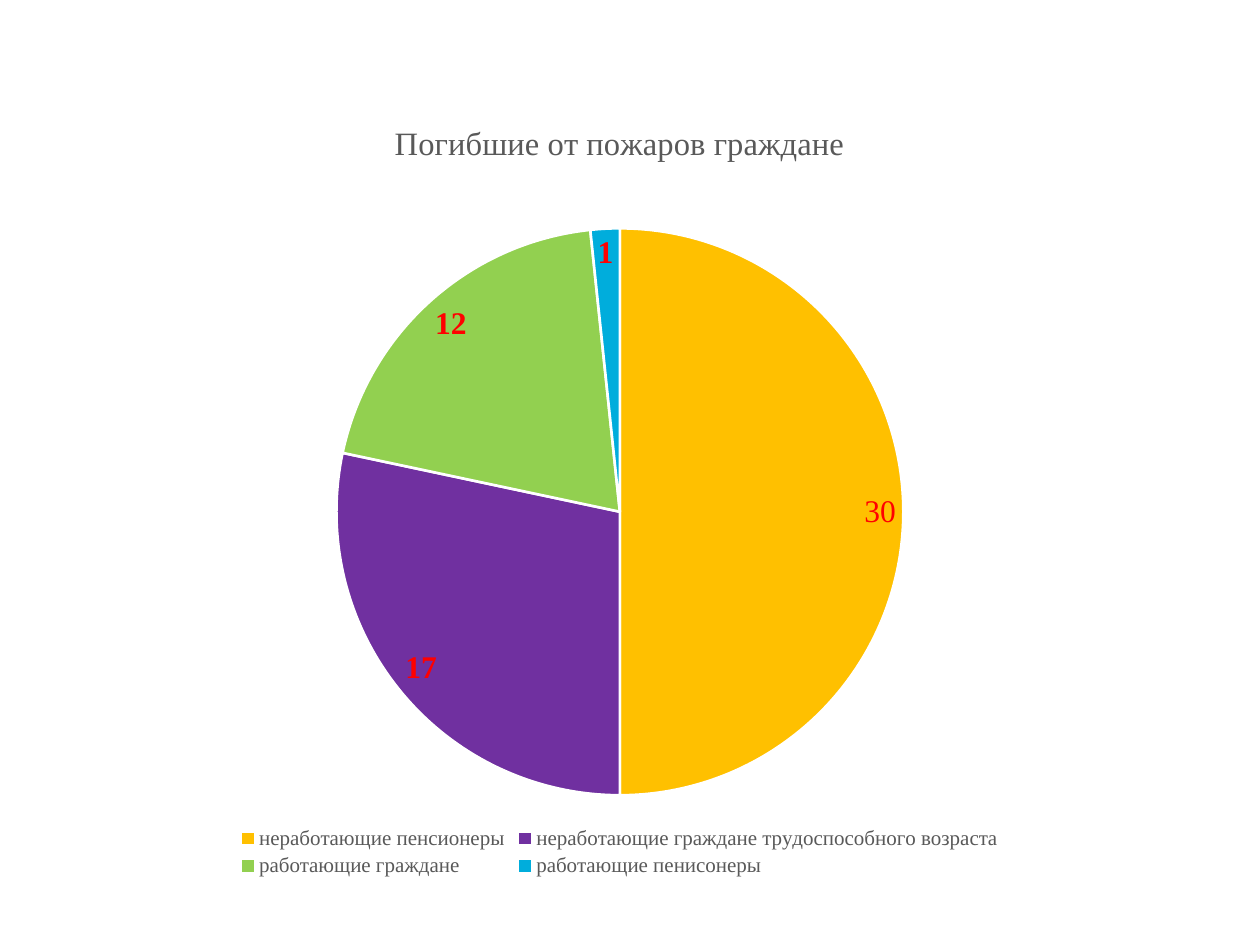
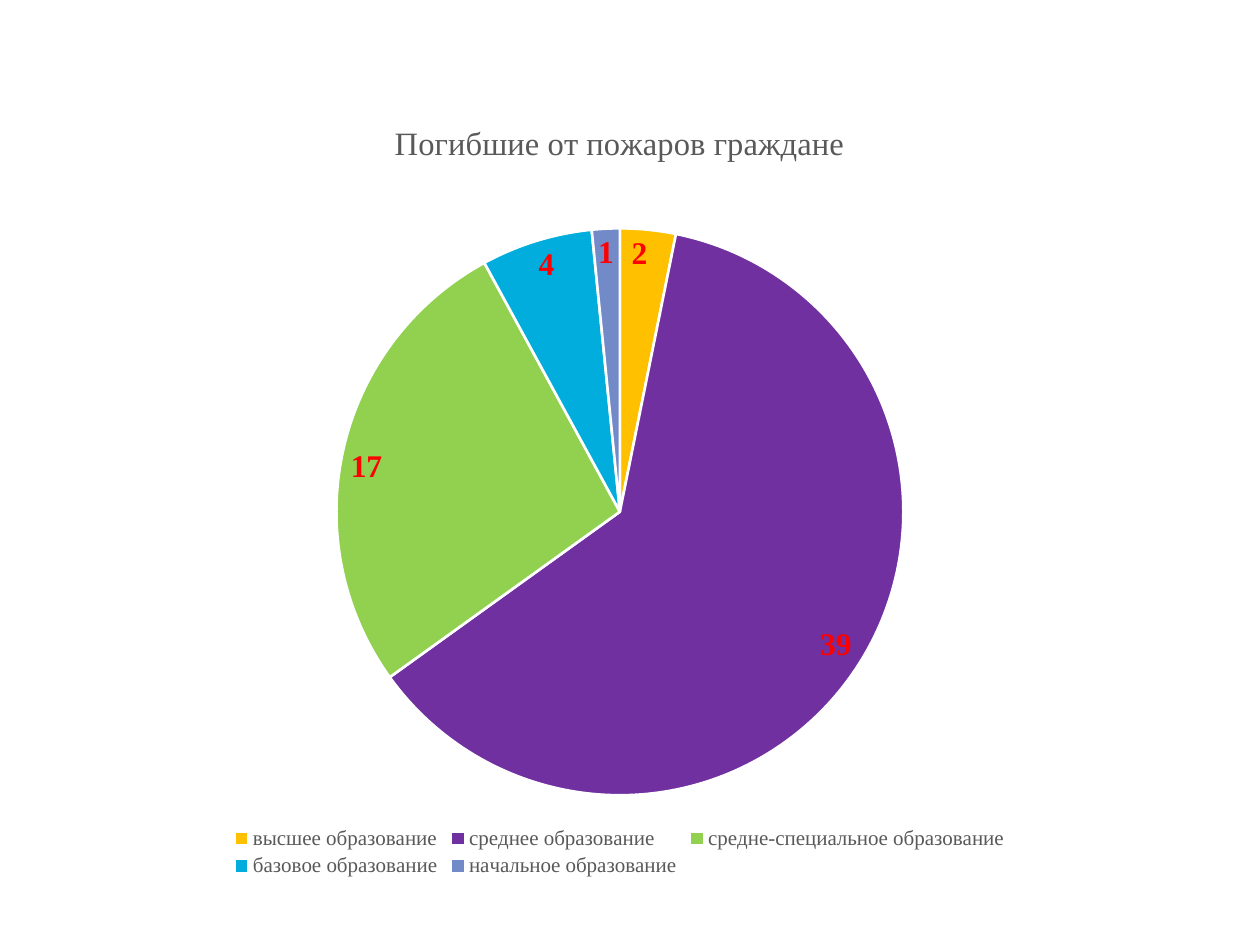
"""Builds two slides with pie charts on people who died in fires."""
import lxml.etree
import pptx
import pptx.chart.data
import pptx.dml.color
import pptx.enum.chart
import pptx.oxml.ns
import pptx.util

Inches = pptx.util.Inches
FONT = "Times New Roman"
TITLE = "Погибшие от пожаров граждане"
COLORS = {"text": "595959", "label": "FF0000", "border": "FFFFFF"}
SLICES = {"amber": "FFC000", "purple": "7030A0", "green": "92D050",
          "cyan": "00ADDC", "blue": "738AC8"}
PLOT_LAYOUT = {"x": 0.24, "y": 0.17, "w": 0.52, "h": 0.72}

OCCUPATION = {
    "неработающие пенсионеры": 30,
    "неработающие граждане трудоспособного возраста": 17,
    "работающие граждане": 12,
    "работающие пенисонеры": 1,
}
EDUCATION = {
    "высшее образование": 2,
    "среднее образование": 39,
    "средне-специальное образование": 17,
    "базовое образование": 4,
    "начальное образование": 1,
}


def rgb(value):
    return pptx.dml.color.RGBColor.from_string(value)


def set_font(font, size, color, bold=False):
    font.name = FONT
    font.size = pptx.util.Pt(size)
    font.bold = bold
    font.color.rgb = rgb(color)


def place_plot(chart):
    qn = pptx.oxml.ns.qn
    plot_area = chart._chartSpace.chart.plotArea
    for old in plot_area.findall(qn("c:layout")):
        plot_area.remove(old)
    layout = lxml.etree.Element(qn("c:layout"))
    manual = lxml.etree.SubElement(layout, qn("c:manualLayout"))
    settings = {"layoutTarget": "inner", "xMode": "edge", "yMode": "edge",
                **PLOT_LAYOUT}
    for name, value in settings.items():
        lxml.etree.SubElement(manual, qn(f"c:{name}"), val=str(value))
    plot_area.insert(0, layout)


def format_slices(series):
    for i, color in zip(range(len(series.values)), SLICES.values()):
        fmt = series.points[i].format
        fmt.fill.solid()
        fmt.fill.fore_color.rgb = rgb(color)
        fmt.line.color.rgb = rgb(COLORS["border"])
        fmt.line.width = pptx.util.Pt(1.5)


def format_labels(labels):
    labels.show_value = True
    labels.show_percentage = False
    labels.position = pptx.enum.chart.XL_LABEL_POSITION.INSIDE_END
    set_font(labels.font, 18, COLORS["label"], True)


def add_pie(slide, values):
    data = pptx.chart.data.CategoryChartData()
    data.categories = list(values)
    data.add_series(TITLE, list(values.values()))
    chart = slide.shapes.add_chart(
        pptx.enum.chart.XL_CHART_TYPE.PIE, Inches(0.5), Inches(0.75),
        Inches(8.84), Inches(6.25), data).chart
    set_font(chart.font, 10, "000000")

    chart.has_title = True
    p = chart.chart_title.text_frame.paragraphs[0]
    p.text = TITLE
    set_font(p.font, 18.6, COLORS["text"])

    chart.has_legend = True
    chart.legend.position = pptx.enum.chart.XL_LEGEND_POSITION.BOTTOM
    chart.legend.include_in_layout = False
    set_font(chart.legend.font, 12, COLORS["text"])

    plot = chart.plots[0]
    plot.vary_by_categories = True
    series = plot.series[0]
    format_slices(series)
    format_labels(series.data_labels)
    place_plot(chart)
    return series


def main():
    prs = pptx.Presentation()
    prs.slide_width, prs.slide_height = Inches(10), Inches(7.5)
    blank = prs.slide_layouts[6]

    series = add_pie(prs.slides.add_slide(blank), OCCUPATION)
    label = series.points[0].data_label
    set_font(label.font, 18, COLORS["label"])
    label.position = pptx.enum.chart.XL_LABEL_POSITION.INSIDE_END

    add_pie(prs.slides.add_slide(blank), EDUCATION)
    prs.save("out.pptx")


if __name__ == "__main__":
    main()
